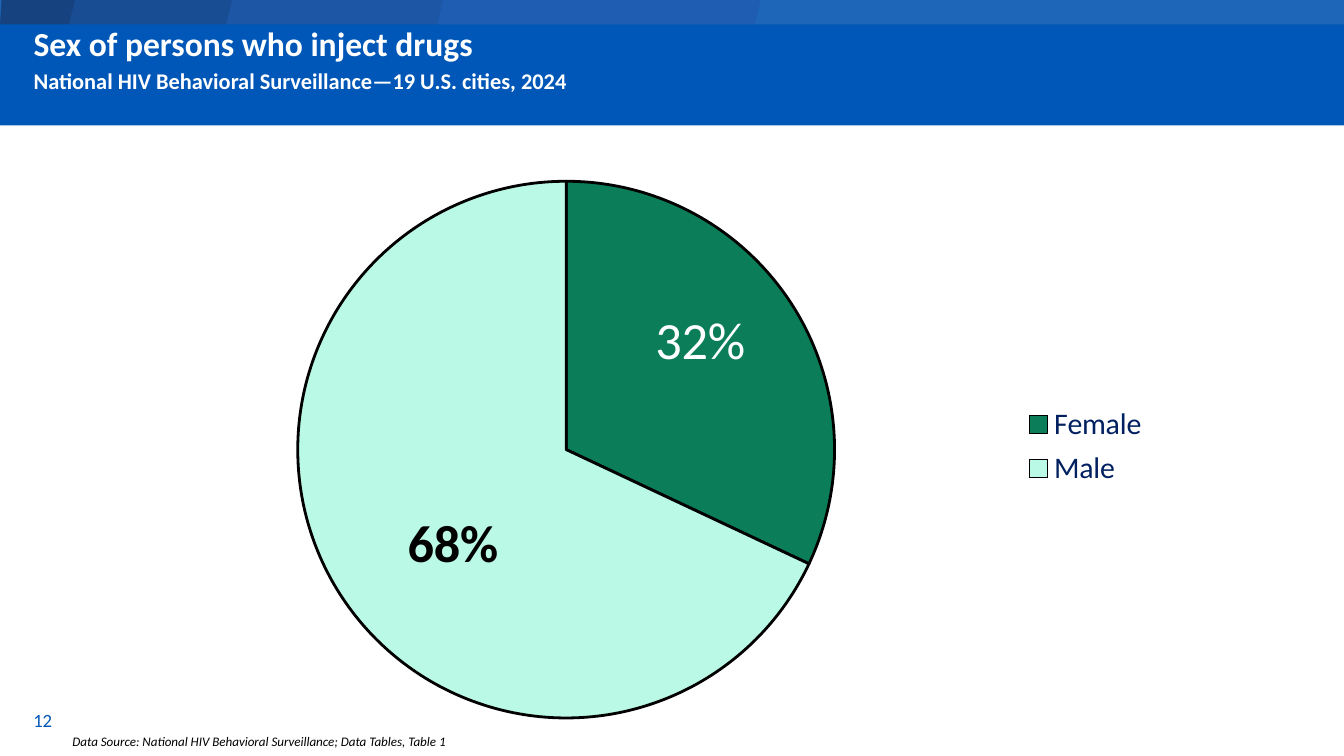
from pptx import Presentation, oxml
from pptx import util as u
from pptx.chart.data import CategoryChartData
from pptx.dml.color import RGBColor
from pptx.enum import chart as charts, shapes, text
from pptx.oxml.ns import nsdecls

FONT = "Calibri"
COLORS = {
    "strip": "1E66B8", "strip_1": "164380", "strip_2": "194D93",
    "strip_3": "1C56A4", "strip_4": "1E5DB2", "banner": "0057B7",
    "white": "FFFFFF", "black": "000000", "legend": "002060",
    "female": "0B7D58", "male": "BAF9E5",
}
STRIP_HEIGHT = 0.48


def color(name):
    return RGBColor.from_string(COLORS[name])


def set_font(font, color_name, **values):
    for name, value in {"name": FONT, **values}.items():
        setattr(font, name, value)
    font.color.rgb = color(color_name)


def fill_plain(shape, color_name):
    shape.shadow.inherit = False
    shape.fill.solid()
    shape.fill.fore_color.rgb = color(color_name)
    shape.line.fill.background()


def add_block(slide, kind, box, color_name):
    shape = slide.shapes.add_shape(kind, *map(u.Cm, box))
    fill_plain(shape, color_name)


def add_header(slide):
    kinds = shapes.MSO_SHAPE
    add_block(slide, kinds.RECTANGLE, (0, 0, 25.4, STRIP_HEIGHT), "strip")
    corners = [(0.03, 0), (2.03, 0), (1.88, STRIP_HEIGHT)]
    builder = slide.shapes.build_freeform(0, u.Cm(STRIP_HEIGHT))
    builder.add_line_segments([(u.Cm(x), u.Cm(y)) for x, y in corners])
    fill_plain(builder.convert_to_shape(), "strip_1")
    for left, width, name in [(1.3, 3.89, "strip_2"), (4.27, 5.08, "strip_3"),
                              (8.26, 6.12, "strip_4")]:
        add_block(slide, kinds.PARALLELOGRAM,
                  (left, 0, width, STRIP_HEIGHT), name)
    add_block(slide, kinds.RECTANGLE, (0, 0.46, 25.4, 1.91), "banner")


def fill_title(slide, lines):
    title = slide.shapes.title
    title.element.getparent().append(title.element)  # in front of the banner
    box = {"left": 0.38, "top": 0.28, "width": 19.2, "height": 1.12}
    for name, value in box.items():
        setattr(title, name, u.Cm(value))
    frame = title.text_frame
    frame.text = "\n".join(line for line, _ in lines)
    frame_format = {
        "vertical_anchor": text.MSO_ANCHOR.TOP,
        "auto_size": text.MSO_AUTO_SIZE.NONE,
        "word_wrap": True,
        "margin_top": u.Cm(0.16),
    }
    for name, value in frame_format.items():
        setattr(frame, name, value)
    for index, (paragraph, (_, size)) in enumerate(zip(frame.paragraphs, lines)):
        paragraph.alignment = text.PP_ALIGN.LEFT
        paragraph.space_before = u.Pt(2 if index else 0)
        set_font(paragraph.runs[0].font, "white", size=u.Pt(size), bold=True)


def add_text(slide, box, words, color_name, anchor, **font_values):
    frame = slide.shapes.add_textbox(*map(u.Cm, box)).text_frame
    frame.word_wrap = True
    frame.vertical_anchor = anchor
    run = frame.paragraphs[0].add_run()
    run.text = words
    set_font(run.font, color_name, **font_values)


def set_layout(element, index, **values):
    """Put a manual layout at the given child index of a chart element."""
    for old in element.xpath("c:layout"):
        element.remove(old)
    parts = "".join(f'<c:{name} val="{value}"/>' for name, value in values.items())
    element.insert(index, oxml.parse_xml(
        f'<c:layout {nsdecls("c")}><c:manualLayout>{parts}'
        '</c:manualLayout></c:layout>'))


def add_pie(slide):
    data = CategoryChartData(number_format="0%")
    data.categories = ["Female", "Male"]
    data.add_series("Series 1", (0.32, 0.68))
    chart = slide.shapes.add_chart(
        charts.XL_CHART_TYPE.PIE,
        *map(u.Cm, (2.26, 2.87, 19.63, 11.15)), data).chart
    chart.has_title = False
    chart.has_legend = True
    chart.legend.position = charts.XL_LEGEND_POSITION.RIGHT
    chart.legend.include_in_layout = False
    set_font(chart.legend.font, "legend", size=u.Pt(16))
    plot = chart.plots[0]
    plot.vary_by_categories = True
    series = plot.series[0]
    labels = series.data_labels
    labels.show_value = True
    labels.number_format = "0%"
    labels.number_format_is_linked = False
    set_font(labels.font, "black", size=u.Pt(28), bold=True)
    slices = [("female", "white", False), ("male", "black", True)]
    for index, (fill, label_color, bold) in enumerate(slices):
        point = series.points[index]
        point.format.fill.solid()
        point.format.fill.fore_color.rgb = color(fill)
        point.format.line.color.rgb = color("black")
        point.format.line.width = u.Pt(1.5)
        label = point.data_label
        set_font(label.font, label_color, size=u.Pt(28), bold=bold)
        label.position = charts.XL_LABEL_POSITION.CENTER

    root = chart.element
    set_layout(root.xpath(".//c:plotArea")[0], 0, layoutTarget="inner",
               xMode="edge", yMode="edge", x=0.17, y=0.05, w=0.52, h=0.91)
    set_layout(root.xpath(".//c:legend")[0], 1,
               xMode="edge", yMode="edge", x=0.87, y=0.42, w=0.12, h=0.16)
    offsets = [(0.02, -0.06), (0, 0.04)]
    for label, (x, y) in zip(root.xpath(".//c:dLbl"), offsets):
        set_layout(label, 1, x=x, y=y)


def main():
    presentation = Presentation()
    presentation.slide_width = u.Cm(25.4)
    presentation.slide_height = u.Cm(14.29)
    slide = presentation.slides.add_slide(presentation.slide_layouts[5])
    add_header(slide)
    fill_title(slide, [
        ("Sex of persons who inject drugs", 18),
        ("National HIV Behavioral Surveillance—19 U.S. cities, 2024", 12),
    ])
    add_pie(slide)
    add_text(slide, (0.38, 13.23, 5.72, 0.76), "12", "banner",
             text.MSO_ANCHOR.MIDDLE, size=u.Pt(10))
    add_text(slide, (1.12, 13.74, 8.05, 0.56),
             "Data Source: National HIV Behavioral Surveillance; "
             "Data Tables, Table 1",
             "black", text.MSO_ANCHOR.TOP, size=u.Pt(7), italic=True)
    presentation.save("out.pptx")


if __name__ == "__main__":
    main()
